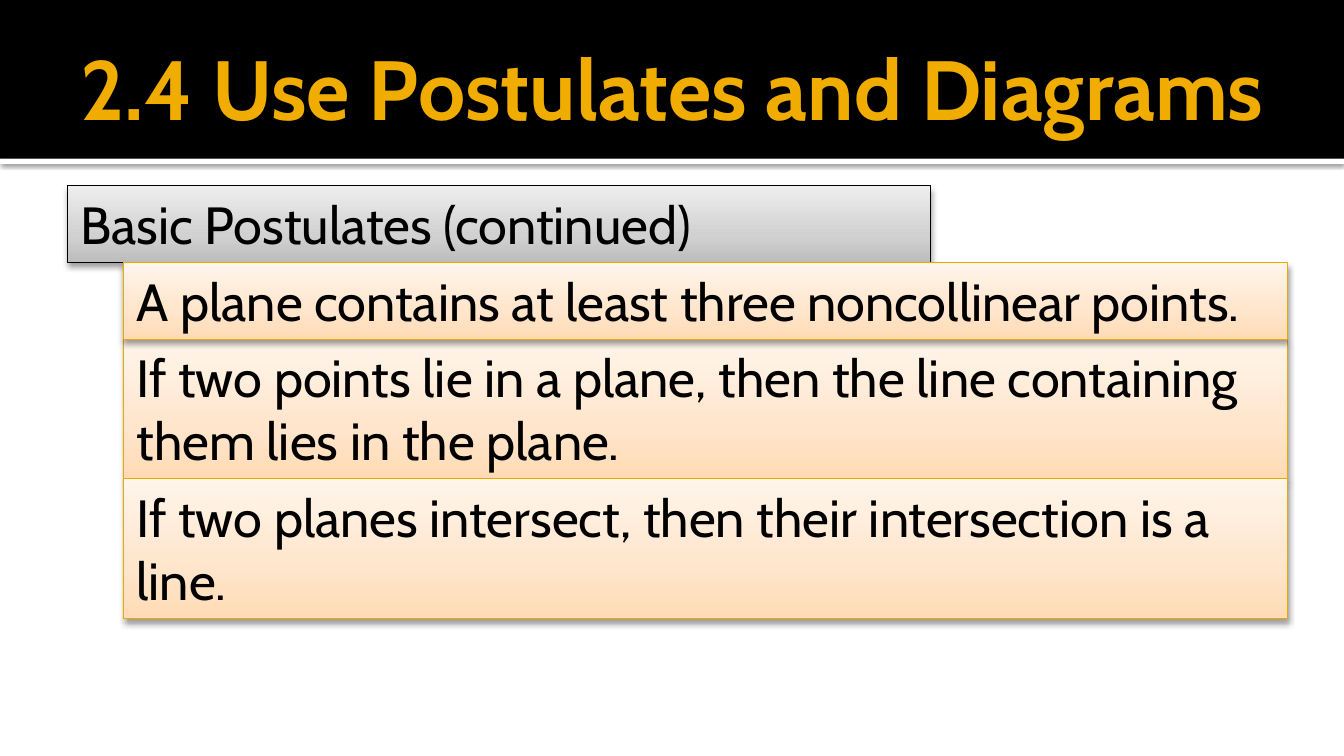
from dataclasses import dataclass
from typing import Optional

import pptx
import pptx.dml.color
import pptx.enum.shapes
import pptx.enum.text
import pptx.oxml
import pptx.oxml.ns
import pptx.util
from pptx.util import Cm


@dataclass(frozen=True)
class Shadow:
    alpha: int  # percent
    blur: float  # points
    distance: float  # points


@dataclass(frozen=True)
class Look:
    stops: tuple[tuple[int, str], ...]  # percent and colour, bottom to top
    line: str


@dataclass(frozen=True)
class Theme:
    font: str = "Cabin"
    title_size: int = 45
    body_size: int = 28
    title: str = "F0AD00"
    text: str = "000000"
    band: str = "000000"
    rule: str = "FFFFFF"
    heading: Look = Look(((0, "BDBDBD"), (35, "D1D1D1"), (100, "EEEEEE")), "000000")
    postulate: Look = Look(((0, "FFDBB5"), (35, "FFE5CB"), (100, "FFF5EB")), "EBA900")
    box_shadow: Shadow = Shadow(38, 3.5, 2)
    rule_shadow: Shadow = Shadow(60, 2.5, 0.8)


@dataclass(frozen=True)
class Box:
    text: str
    left: float  # centimetres, as are the other lengths
    top: float
    width: float
    height: float
    look: Look


THEME = Theme()
SLIDE_W, SLIDE_H = 25.4, 14.29
BAND_H = 3.0
HEADING_TOP = 3.51
ONE_LINE, TWO_LINES = 1.45, 2.64

POSTULATES = (
    ("A plane contains at least three noncollinear points.", ONE_LINE),
    ("If two points lie in a plane, then the line containing them lies in the plane.", TWO_LINES),
    ("If two planes intersect, then their intersection is a line.", TWO_LINES),
)


def rgb(value: str) -> pptx.dml.color.RGBColor:
    return pptx.dml.color.RGBColor.from_string(value)


def add_rect(slide, left: float, top: float, width: float, height: float,
             shadow: Optional[Shadow] = None):
    """Add a rectangle, with a shadow falling straight down if one is given."""
    sp = slide.shapes.add_shape(pptx.enum.shapes.MSO_SHAPE.RECTANGLE,
                                Cm(left), Cm(top), Cm(width), Cm(height))
    sp.shadow.inherit = False
    if shadow:
        effects = sp._element.spPr.find(pptx.oxml.ns.qn("a:effectLst"))
        effects.append(pptx.oxml.parse_xml(
            f'<a:outerShdw {pptx.oxml.ns.nsdecls("a")} blurRad="{pptx.util.Pt(shadow.blur)}" '
            f'dist="{pptx.util.Pt(shadow.distance)}" dir="5400000" rotWithShape="0">'
            f'<a:srgbClr val="000000"><a:alpha val="{shadow.alpha * 1000}"/></a:srgbClr>'
            f'</a:outerShdw>'))
    return sp


def add_bar(slide, top: float, height: float, color: str,
            shadow: Optional[Shadow] = None) -> None:
    sp = add_rect(slide, 0, top, SLIDE_W, height, shadow)
    sp.fill.solid()
    sp.fill.fore_color.rgb = rgb(color)
    sp.line.fill.background()


def fill_gradient(sp, look: Look) -> None:
    sp.fill.gradient()
    sp.fill.gradient_angle = 90
    stops = sp._element.spPr.find(".//" + pptx.oxml.ns.qn("a:gsLst"))
    for stop in list(stops):
        stops.remove(stop)
    for position, color in look.stops:
        stops.append(pptx.oxml.parse_xml(
            f'<a:gs {pptx.oxml.ns.nsdecls("a")} pos="{position * 1000}">'
            f'<a:srgbClr val="{color}"/></a:gs>'))


def write(tf, text: str, size: int, color: str, bold: bool = False) -> None:
    tf.text = text
    tf.word_wrap = True
    p = tf.paragraphs[0]
    p.alignment = pptx.enum.text.PP_ALIGN.LEFT
    font = p.runs[0].font
    font.name, font.size, font.bold = THEME.font, pptx.util.Pt(size), bold
    font.color.rgb = rgb(color)


def add_box(slide, box: Box) -> None:
    sp = add_rect(slide, box.left, box.top, box.width, box.height, THEME.box_shadow)
    fill_gradient(sp, box.look)
    sp.line.color.rgb = rgb(box.look.line)
    sp.line.width = pptx.util.Pt(0.5)
    tf = sp.text_frame
    write(tf, box.text, THEME.body_size, THEME.text)
    tf.vertical_anchor = pptx.enum.text.MSO_ANCHOR.TOP
    tf.auto_size = pptx.enum.text.MSO_AUTO_SIZE.SHAPE_TO_FIT_TEXT


def add_title(slide, text: str) -> None:
    title = slide.shapes.title
    title.left, title.top, title.width, title.height = Cm(1.27), Cm(0.33), Cm(22.86), Cm(2.62)
    tf = title.text_frame
    write(tf, text, THEME.title_size, THEME.title, bold=True)
    tf.auto_size = pptx.enum.text.MSO_AUTO_SIZE.NONE
    tf.vertical_anchor = pptx.enum.text.MSO_ANCHOR.MIDDLE
    tf.margin_left = Cm(0.25)
    tf.margin_right = tf.margin_top = tf.margin_bottom = Cm(0.13)
    # Bring the title in front of the band
    slide.shapes._spTree.append(title._element)


def main() -> None:
    prs = pptx.Presentation()
    prs.slide_width, prs.slide_height = Cm(SLIDE_W), Cm(SLIDE_H)
    slide = prs.slides.add_slide(prs.slide_layouts[5])

    # Header band with the white rule below it
    add_bar(slide, BAND_H, 0.1, THEME.rule, THEME.rule_shadow)
    add_bar(slide, 0, BAND_H, THEME.band)
    add_title(slide, "2.4 Use Postulates and Diagrams")

    # Heading
    add_box(slide, Box("Basic Postulates (continued)", 1.27, HEADING_TOP, 16.31,
                       ONE_LINE, THEME.heading))

    # Postulates stacked below the heading, the first one in front
    boxes = []
    top = HEADING_TOP + ONE_LINE
    for text, height in POSTULATES:
        boxes.append(Box(text, 2.33, top, 22.01, height, THEME.postulate))
        top += height
    for box in boxes[1:] + boxes[:1]:
        add_box(slide, box)

    prs.save("out.pptx")


if __name__ == "__main__":
    main()
